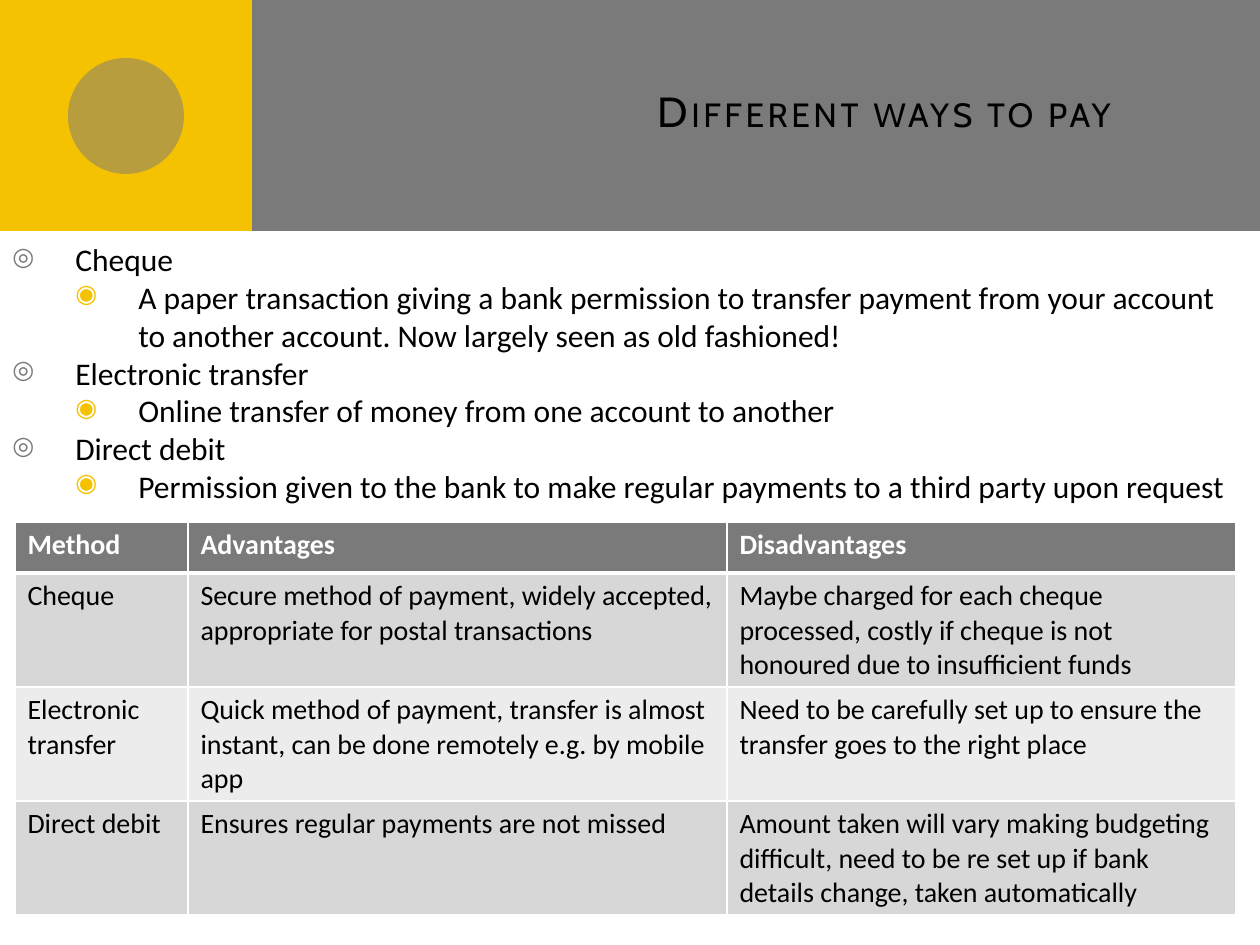
from dataclasses import dataclass
from typing import Any

import pptx
import pptx.dml.color
import pptx.enum.shapes
import pptx.enum.text
import pptx.oxml.ns
import pptx.util
from lxml import etree

SCALE = 914400 / 126
SHAPE = pptx.enum.shapes.MSO_SHAPE
ALIGN = pptx.enum.text.PP_ALIGN
ANCHOR = pptx.enum.text.MSO_ANCHOR


@dataclass(frozen=True)
class Theme:
    grey: str = "7A7A7A"
    gold: str = "F5C201"
    black: str = "000000"
    white: str = "FFFFFF"
    dark_band: str = "D7D7D7"
    light_band: str = "ECECEC"
    heading_font: str = "Cabin"
    body_font: str = "Calibri"
    title_size: int = 24
    body_size: int = 18
    table_size: int = 16


@dataclass(frozen=True)
class Box:
    left: int
    top: int
    width: int
    height: int

    def emu(self) -> tuple[int, ...]:
        return tuple(px(n) for n in (self.left, self.top, self.width, self.height))


@dataclass(frozen=True)
class Panel:
    preset: Any
    box: Box
    color: str
    opacity: int = 100


@dataclass(frozen=True)
class Method:
    name: str
    meaning: str
    advantages: str
    disadvantages: str


@dataclass(frozen=True)
class Bullet:
    symbol: str
    color: str


THEME = Theme()
BULLETS = (Bullet("◎", THEME.grey), Bullet("◉", THEME.gold))
INDENT = 63
PANELS = (
    Panel(SHAPE.RECTANGLE, Box(0, 0, 1260, 231), THEME.grey),
    Panel(SHAPE.RECTANGLE, Box(0, 0, 252, 231), THEME.gold),
    Panel(SHAPE.OVAL, Box(68, 58, 116, 116), THEME.grey, opacity=50),
)
HEADINGS = ("Method", "Advantages", "Disadvantages")
COLUMN_WIDTHS = (173, 539, 509)
HEADER_HEIGHT, ROW_HEIGHT = 51, 114
METHODS = (
    Method(
        "Cheque",
        "A paper transaction giving a bank permission to transfer payment from your "
        "account to another account. Now largely seen as old fashioned!",
        "Secure method of payment, widely accepted, appropriate for postal transactions",
        "Maybe charged for each cheque processed, costly if cheque is not honoured "
        "due to insufficient funds",
    ),
    Method(
        "Electronic transfer",
        "Online transfer of money from one account to another",
        "Quick method of payment, transfer is almost instant, can be done remotely "
        "e.g. by mobile app",
        "Need to be carefully set up to ensure the transfer goes to the right place",
    ),
    Method(
        "Direct debit",
        "Permission given to the bank to make regular payments to a third party upon request",
        "Ensures regular payments are not missed",
        "Amount taken will vary making budgeting difficult, need to be re set up if "
        "bank details change, taken automatically",
    ),
)


def px(length: int) -> int:
    return round(length * SCALE)


def rgb(color: str) -> pptx.dml.color.RGBColor:
    return pptx.dml.color.RGBColor.from_string(color)


def add_xml(parent: Any, tag: str, **attributes: Any) -> Any:
    values = {key: str(value) for key, value in attributes.items()}
    return etree.SubElement(parent, pptx.oxml.ns.qn(tag), values)


def write(paragraph: Any, text: str, *, size: int, font: str = THEME.body_font,
          color: str = THEME.black, bold: bool = False, align: Any = ALIGN.LEFT,
          spacing: int = 0, small_caps: bool = False) -> None:
    paragraph.alignment = align
    run = paragraph.add_run()
    run.text = text
    run.font.name = font
    run.font.size = pptx.util.Pt(size)
    run.font.bold = bold
    run.font.color.rgb = rgb(color)
    properties = run.font._element
    if spacing:
        properties.set("spc", str(spacing * 100))
    if small_caps:
        properties.set("cap", "small")


def draw_panel(slide: Any, panel: Panel) -> None:
    shape = slide.shapes.add_shape(panel.preset, *panel.box.emu())
    shape.shadow.inherit = False
    shape.line.fill.background()
    shape.fill.solid()
    shape.fill.fore_color.rgb = rgb(panel.color)
    if panel.opacity < 100:
        fill_color = shape._element.spPr.find(".//" + pptx.oxml.ns.qn("a:srgbClr"))
        add_xml(fill_color, "a:alpha", val=panel.opacity * 1000)


def add_text_frame(slide: Any, box: Box) -> Any:
    frame = slide.shapes.add_textbox(*box.emu()).text_frame
    frame.word_wrap = True
    return frame


def set_bullet(paragraph: Any, level: int) -> None:
    bullet = BULLETS[level]
    paragraph.level = level
    properties = paragraph._p.get_or_add_pPr()
    properties.set("marL", str(px(INDENT * (level + 1))))
    properties.set("indent", str(-px(INDENT)))
    add_xml(add_xml(properties, "a:buClr"), "a:srgbClr", val=bullet.color)
    add_xml(properties, "a:buSzPct", val=80000)
    add_xml(properties, "a:buChar", char=bullet.symbol)


def draw_definitions(slide: Any, box: Box) -> None:
    frame = add_text_frame(slide, box)
    entries = [(level, text) for method in METHODS
               for level, text in enumerate((method.name, method.meaning))]
    for index, (level, text) in enumerate(entries):
        paragraph = frame.add_paragraph() if index else frame.paragraphs[0]
        write(paragraph, text, size=THEME.body_size)
        set_bullet(paragraph, level)


def set_borders(cell: Any, **widths: int) -> None:
    """Draw white borders, in points, ahead of the fill that is set later."""
    properties = cell._tc.get_or_add_tcPr()
    for side, width in widths.items():
        line = add_xml(properties, f"a:ln{side}", w=pptx.util.Pt(width))
        add_xml(add_xml(line, "a:solidFill"), "a:srgbClr", val=THEME.white)


def draw_comparison(slide: Any, left: int, top: int) -> None:
    rows = [HEADINGS] + [(m.name, m.advantages, m.disadvantages) for m in METHODS]
    heights = [HEADER_HEIGHT] + [ROW_HEIGHT] * len(METHODS)
    box = Box(left, top, sum(COLUMN_WIDTHS), sum(heights))
    table = slide.shapes.add_table(len(rows), len(HEADINGS), *box.emu()).table
    for column, width in zip(table.columns, COLUMN_WIDTHS):
        column.width = px(width)
    for index, (texts, height) in enumerate(zip(rows, heights)):
        table.rows[index].height = px(height)
        header = index == 0
        band = THEME.dark_band if index % 2 else THEME.light_band
        for cell, text in zip(table.rows[index].cells, texts):
            set_borders(cell, L=1, R=1, T=3 if index == 1 else 1, B=3 if header else 1)
            cell.fill.solid()
            cell.fill.fore_color.rgb = rgb(THEME.grey if header else band)
            write(cell.text_frame.paragraphs[0], text, size=THEME.table_size,
                  color=THEME.white if header else THEME.black, bold=header)


def main() -> None:
    deck = pptx.Presentation()
    deck.slide_width, deck.slide_height = px(1260), px(945)
    slide = deck.slides.add_slide(deck.slide_layouts[6])
    for panel in PANELS:
        draw_panel(slide, panel)
    title = add_text_frame(slide, Box(336, 32, 861, 158))
    title.vertical_anchor = ANCHOR.MIDDLE
    write(title.paragraphs[0], "Different ways to pay", size=THEME.title_size,
          font=THEME.heading_font, align=ALIGN.RIGHT, spacing=2, small_caps=True)
    draw_definitions(slide, Box(0, 234, 1260, 625))
    draw_comparison(slide, 15, 522)
    deck.save("out.pptx")


if __name__ == "__main__":
    main()
